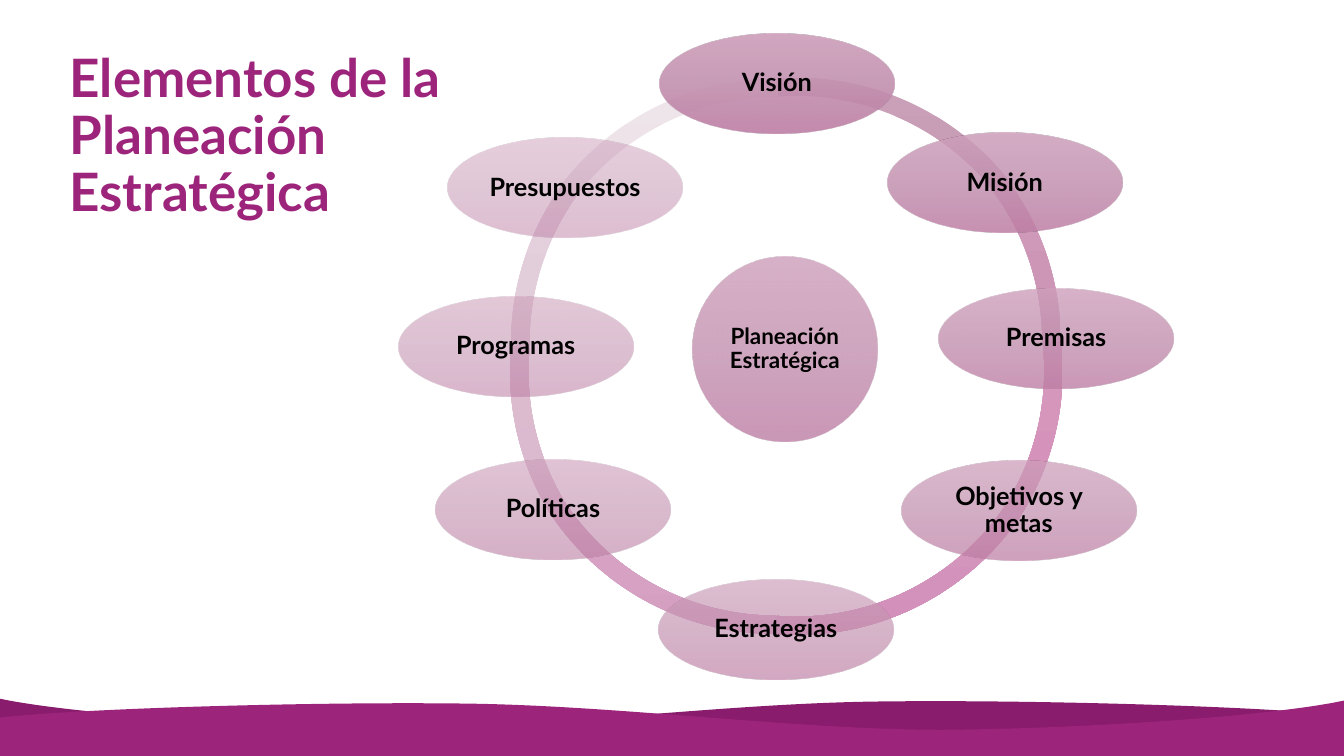
from copy import deepcopy
from dataclasses import dataclass

from lxml.etree import SubElement
from pptx import Presentation
from pptx.dml.color import RGBColor as RGB
from pptx.enum.shapes import MSO_SHAPE as SHAPE
from pptx.enum.text import MSO_ANCHOR as ANCHOR, MSO_AUTO_SIZE as AUTO, PP_ALIGN as ALIGN
from pptx.oxml.ns import qn
from pptx.shapes.autoshape import Shape
from pptx.slide import Slide
from pptx.text.text import TextFrame
from pptx.util import Inches, Pt

PLUM = RGB(0x9C, 0x24, 0x7B)
DARK = RGB(0x89, 0x1C, 0x6C)
BLACK = RGB(0, 0, 0)
ROSE = ("CE9FBB", "C392B0", "BE7EA5")

WIDE, TALL = 13.33, 7.5
RING, THICK = 5.36, 0.034
UNIT = 100
CREST = (
    (13.33, 7.1), (12.56, 7.01), (10.26, 6.94), (8.7, 6.96), (7.15, 6.98),
    (5.43, 7.22), (3.98, 7.22), (2.53, 7.21), (0.68, 7.08), (-0.01, 6.93),
)
Point = tuple[float, float]


@dataclass
class Arc:
    left: float
    top: float
    start: float
    end: float
    tints: tuple[str, str, str]


@dataclass
class Node:
    text: str
    left: float
    top: float
    alpha: int
    width: float = 2.33
    height: float = 0.99
    size: int = 18
    inset: float = 0.03


ARCS = (
    Arc(5.02, 0.78, 217.35, 270.01, ("EEE5EA", "E7DAE2", "E5D5DE")),
    Arc(5.07, 0.72, 179.2, 215.58, ("E8D6E1", "E1CBD8", "DEC3D3")),
    Arc(5.06, 1.01, 148.73, 185.53, ("E3C8D8", "DCBBCF", "D9B1C9")),
    Arc(5.01, 0.93, 89.93, 146.79, ("DFBAD1", "D9ADC8", "D59FC1")),
    Arc(5.22, 0.94, 33.26, 94.49, ("DDAECB", "D6A1C1", "D390BA")),
    Arc(5.18, 1.0, 352.96, 31.66, ("DCA5C6", "D697BC", "D384B4")),
    Arc(5.16, 0.7, 323.54, 359.54, ("D5A0C0", "CB94B5", "C780AB")),
    Arc(5.22, 0.77, 265.73, 321.49, ("CA9FB8", "BF92AD", "B87EA1")),
)
STEPS = (
    ("Visión", 6.54, 0.33), ("Misión", 8.8, 1.32), ("Premisas", 9.31, 2.86),
    ("Objetivos y metas", 8.94, 4.57), ("Estrategias", 6.53, 5.75),
    ("Políticas", 4.32, 4.56), ("Programas", 3.95, 2.94), ("Presupuestos", 4.44, 1.37),
)
HUB = Node("Planeación Estratégica", 6.87, 2.55, 80, 1.83, 1.83, 16, 0.02)
NODES = [HUB] + [
    Node(text, left, top, round(90 - 40 * i / 7)) for i, (text, left, top) in enumerate(STEPS)
]


def wave(slide: Slide, knots: tuple[Point, ...], color: RGB) -> None:
    """Fill the band between a curved crest and the slide's foot."""
    points = [*knots, (knots[-1][0], TALL), (knots[0][0], TALL)]
    grid = [(round(x * UNIT), round(y * UNIT)) for x, y in points]
    form = slide.shapes.build_freeform(*grid[0], scale=Inches(1) / UNIT)
    form.add_line_segments(grid[1:], close=True)
    band = form.convert_to_shape()
    lines = list(band.element.iter(qn("a:lnTo")))
    for i in range(0, len(knots) - 1, 3):
        first, *rest = lines[i:i + 3]
        first.tag = qn("a:cubicBezTo")
        for line in rest:
            first.append(line[0])
            line.getparent().remove(line)
    band.shadow.inherit = False
    band.fill.solid()
    band.fill.fore_color.rgb = color
    band.line.fill.background()


def shade(shape: Shape, tints: tuple[str, str, str], alpha: int = 100) -> None:
    """Apply a vertical three-stop gradient without outline or shadow."""
    shape.shadow.inherit = False
    shape.line.fill.background()
    fill = shape.fill
    fill.gradient()
    fill.gradient_angle = 270
    stops = next(shape.element.iter(qn("a:gsLst")))
    stops.append(deepcopy(stops[0]))
    for stop, tint, place in zip(fill.gradient_stops, tints, (0, 0.5, 1)):
        stop.color.rgb = RGB.from_string(tint)
        stop.position = place
    if alpha < 100:
        for stop in stops:
            SubElement(stop[0], qn("a:alpha")).set("val", str(alpha * 1000))


def write(frame: TextFrame, text: str, size: float, color: RGB, align: ALIGN) -> None:
    """Set one bold paragraph, centred in height."""
    frame.text = text
    frame.word_wrap = True
    frame.auto_size = AUTO.NONE
    frame.vertical_anchor = ANCHOR.MIDDLE
    para = frame.paragraphs[0]
    para.alignment = align
    para.line_spacing = 0.9
    font = para.runs[0].font
    for name, value in {"name": "Lato", "size": Pt(size), "bold": True}.items():
        setattr(font, name, value)
    font.color.rgb = color


def draw_arc(slide: Slide, arc: Arc) -> None:
    """Draw one section of the ring."""
    shape = slide.shapes.add_shape(
        SHAPE.BLOCK_ARC, Inches(arc.left), Inches(arc.top), Inches(RING), Inches(RING))
    for i, value in enumerate((arc.start * 0.6, arc.end * 0.6, THICK)):
        shape.adjustments[i] = value
    shade(shape, arc.tints)


def draw_node(slide: Slide, node: Node) -> None:
    """Draw one labelled ellipse."""
    box = (Inches(v) for v in (node.left, node.top, node.width, node.height))
    shape = slide.shapes.add_shape(SHAPE.OVAL, *box)
    shade(shape, ROSE, node.alpha)
    frame = shape.text_frame
    for side in ("left", "top", "right", "bottom"):
        setattr(frame, f"margin_{side}", Inches(node.inset))
    write(frame, node.text, node.size, BLACK, ALIGN.CENTER)


def main() -> None:
    """Build and save the slide."""
    deck = Presentation()
    deck.slide_width, deck.slide_height = Inches(WIDE), Inches(TALL)
    slide = deck.slides.add_slide(deck.slide_layouts[5])
    wave(slide, CREST, DARK)
    wave(slide, tuple((13.32 - x, y + 0.02) for x, y in CREST), PLUM)
    title = slide.shapes.title
    spot = {"left": 0.59, "top": 0.64, "width": 4.2, "height": 1.45}
    for name, value in spot.items():
        setattr(title, name, Inches(value))
    write(title.text_frame, "Elementos de la Planeación Estratégica", 37.8, PLUM, ALIGN.LEFT)
    for arc in ARCS:
        draw_arc(slide, arc)
    for node in NODES:
        draw_node(slide, node)
    deck.save("out.pptx")


if __name__ == "__main__":
    main()
